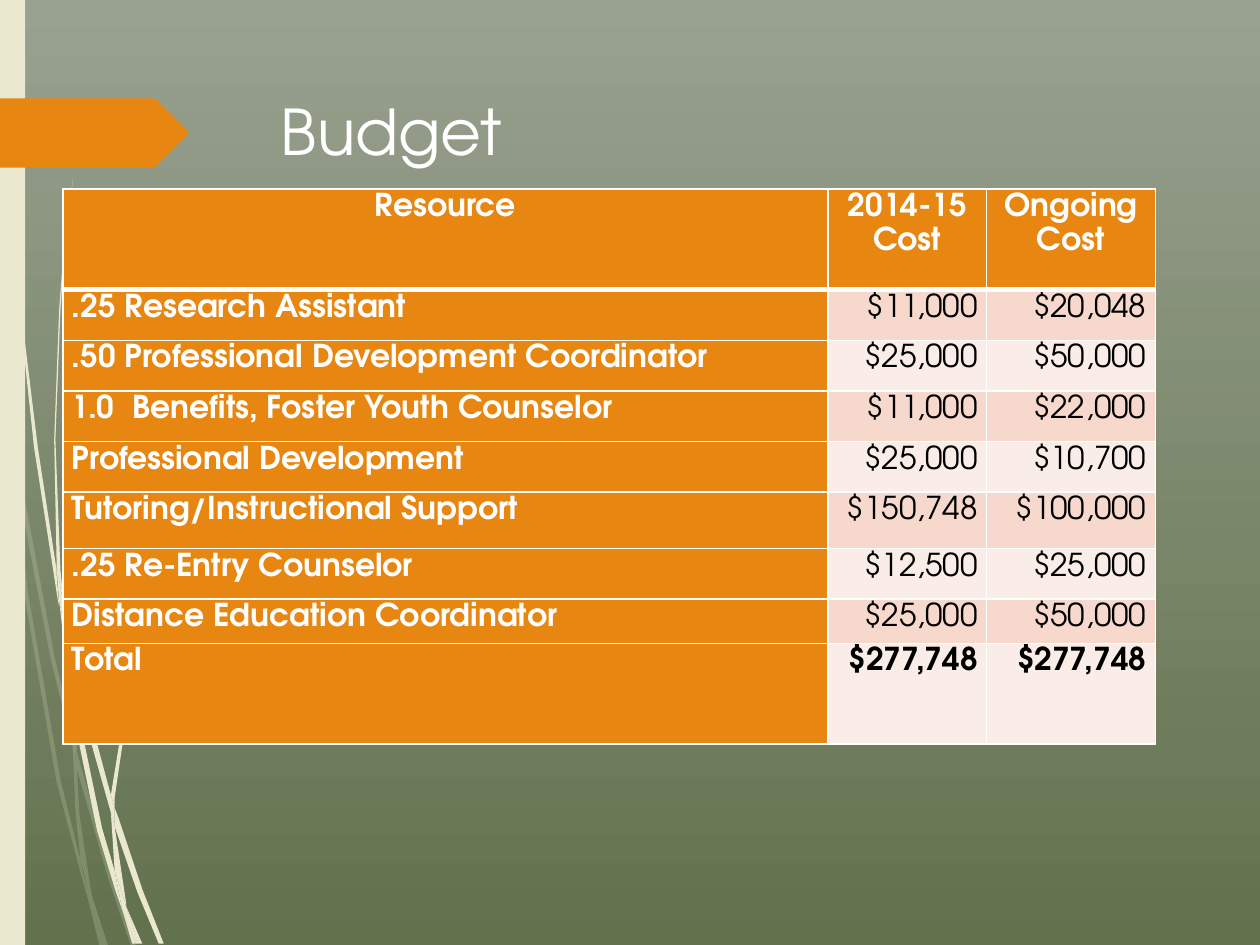
from lxml.etree import SubElement
from pptx import Presentation
from pptx.dml.color import RGBColor
from pptx.enum.shapes import MSO_SHAPE
from pptx.enum.text import MSO_ANCHOR, PP_ALIGN
from pptx.oxml.ns import qn
from pptx.util import Cm, Pt

FONT = "TeX Gyre Adventor"
COLORS = {
    "sky": "99A190", "ground": "62724D", "cream": "EAE8CF", "orange": "E78712",
    "white": "FFFFFF", "black": "000000", "band_dark": "F6D9CC", "band_light": "FAEDE7",
}

TITLE = "Budget"
BUDGET = [
    ("Resource", "2014-15 Cost", "Ongoing Cost"),
    (".25 Research Assistant", "$11,000", "$20,048"),
    (".50 Professional Development Coordinator", "$25,000", "$50,000"),
    ("1.0  Benefits, Foster Youth Counselor", "$11,000", "$22,000"),
    ("Professional Development", "$25,000", "$10,700"),
    ("Tutoring/Instructional Support", "$150,748", "$100,000"),
    (".25 Re-Entry Counselor", "$12,500", "$25,000"),
    ("Distance Education Coordinator", "$25,000", "$50,000"),
    ("Total", "$277,748", "$277,748"),
]
COL_WIDTHS = [15.42, 3.2, 3.4]
ROW_HEIGHTS = [2.03, 1.02, 1.02, 1.02, 1.02, 1.14, 1.02, 0.89, 2.03]

# Grass outlines, in hundredths of an inch
UNIT = Cm(2.54) / 100
FAINT_GRASS = [
    [(8, 350), (6, 322), (0, 282), (0, 299), (7, 344)],
    [(40, 522), (59, 599), (59, 586), (43, 520), (10, 345), (12, 376)],
    [(64, 607), (61, 596), (61, 610), (85, 694), (104, 751), (108, 751), (88, 692)],
    [(83, 751), (86, 751), (73, 711)],
    [(64, 683), (48, 619), (22, 469), (12, 376), (8, 350), (19, 470), (45, 621),
     (64, 693), (70, 714), (69, 707)],
    [(58, 599), (60, 646), (64, 683), (67, 692), (73, 711), (72, 706), (63, 646),
     (61, 610), (61, 608)],
    [(61, 584), (76, 462), (111, 349), (159, 245), (187, 198), (201, 175), (217, 154),
     (217, 153), (201, 175), (186, 197), (158, 244), (110, 348), (75, 461), (59, 584),
     (59, 586), (61, 596)],
    [(70, 714), (79, 751), (82, 751)],
    [(61, 608), (61, 610), (61, 596), (59, 586), (58, 599)],
    [(67, 692), (65, 683), (69, 707), (70, 714), (82, 751), (83, 751), (73, 711)],
]
BRIGHT_GRASS = [
    [(5, 110), (14, 233), (27, 355), (46, 477), (47, 481), (45, 457), (45, 453),
     (30, 355), (15, 232), (6, 109), (4, 48), (3, 0), (2, 0), (3, 48)],
    [(73, 592), (88, 645), (88, 633), (88, 631), (77, 590), (50, 472), (53, 505)],
    [(94, 649), (91, 641), (91, 656), (109, 708), (126, 749), (130, 749), (113, 706)],
    [(91, 691), (81, 657), (60, 556), (53, 505), (47, 477), (56, 557), (77, 659),
     (92, 708), (97, 722), (96, 717)],
    [(50, 472), (48, 453), (44, 349), (48, 245), (52, 193), (58, 141), (51, 193),
     (47, 245), (43, 349), (45, 449), (49, 472)],
    [(110, 749), (113, 749), (100, 719)],
    [(47, 477), (53, 505), (50, 472), (49, 472), (45, 449), (45, 453)],
    [(91, 633), (103, 552), (131, 476), (169, 406), (191, 374), (203, 359), (216, 344),
     (215, 344), (203, 358), (191, 373), (168, 405), (129, 474), (101, 551), (88, 631),
     (91, 641)],
    [(97, 722), (105, 749), (108, 749)],
    [(88, 645), (91, 691), (96, 706), (100, 719), (100, 716), (91, 656), (90, 651)],
    [(88, 645), (90, 651), (91, 656), (91, 641), (88, 631), (88, 633)],
    [(96, 706), (91, 691), (96, 717), (97, 722), (108, 749), (110, 749), (100, 719)],
]
ARROW = [(0, 78), (121, 78), (124, 79), (149, 104), (149, 107), (124, 132), (121, 133), (0, 133)]


def rgb(name):
    return RGBColor.from_string(COLORS[name])


def paint(sp, color):
    sp.shadow.inherit = False
    sp.fill.solid()
    sp.fill.fore_color.rgb = rgb(color)
    sp.line.fill.background()


def add_outline(s, points, color, alpha=None):
    builder = s.shapes.build_freeform(*points[0], scale=UNIT)
    builder.add_line_segments(points[1:], close=True)
    sp = builder.convert_to_shape()
    paint(sp, color)
    if alpha:
        clr = sp.fill._xPr.find(qn("a:solidFill"))[0]
        SubElement(clr, qn("a:alpha"), val=str(alpha * 1000))


def set_borders(cell, **widths):
    tcPr = cell._tc.get_or_add_tcPr()
    for side in "LRTB":
        ln = SubElement(tcPr, qn(f"a:ln{side}"), w=str(Pt(widths.get(side, 1))))
        SubElement(SubElement(ln, qn("a:solidFill")), qn("a:srgbClr"), val=COLORS["white"])


def fill_cell(cell, text, row, col):
    header, label, total = row == 0, col == 0, row == len(BUDGET) - 1
    set_borders(cell, T=3 if row == 1 else 1, B=3 if header else 1)
    cell.fill.solid()
    band = "band_dark" if row % 2 else "band_light"
    cell.fill.fore_color.rgb = rgb("orange" if header or label else band)
    cell.margin_left = cell.margin_right = Cm(0.18)
    cell.margin_top = cell.margin_bottom = 0
    cell.text = text
    p = cell.text_frame.paragraphs[0]
    p.line_spacing = 1.15
    p.alignment = PP_ALIGN.CENTER if header else PP_ALIGN.LEFT if label else PP_ALIGN.RIGHT
    p.font.name, p.font.size = FONT, Pt(18)
    p.font.bold = header or label or total
    p.font.color.rgb = rgb("white" if header or label else "black")


def main():
    prs = Presentation()
    prs.slide_width, prs.slide_height = Cm(25.4), Cm(19.05)
    s = prs.slides.add_slide(prs.slide_layouts[5])

    # Background
    bg = s.background.fill
    bg.gradient()
    bg.gradient_angle = 270
    for stop, color in zip(bg.gradient_stops, ("sky", "ground")):
        stop.color.rgb = rgb(color)

    # Grass, side bar and arrow
    for points in FAINT_GRASS:
        add_outline(s, points, "cream", alpha=20)
    for points in BRIGHT_GRASS:
        add_outline(s, points, "cream")
    bar = s.shapes.add_shape(MSO_SHAPE.RECTANGLE, 0, 0, Cm(0.51), prs.slide_height)
    paint(bar, "cream")
    add_outline(s, ARROW, "orange")

    # Title
    title = s.shapes.title
    title.left, title.top, title.width, title.height = Cm(5.41), Cm(1.73), Cm(18.31), Cm(3.56)
    tf = title.text_frame
    tf.text = TITLE
    tf.vertical_anchor = MSO_ANCHOR.TOP
    p = tf.paragraphs[0]
    p.alignment = PP_ALIGN.LEFT
    p.font.name, p.font.size = FONT, Pt(36)
    p.font.color.rgb = rgb("white")

    # Budget table
    table = s.shapes.add_table(len(BUDGET), len(COL_WIDTHS), Cm(1.27), Cm(3.81),
                               Cm(sum(COL_WIDTHS)), Cm(sum(ROW_HEIGHTS))).table
    for column, width in zip(table.columns, COL_WIDTHS):
        column.width = Cm(width)
    for i, (height, texts) in enumerate(zip(ROW_HEIGHTS, BUDGET)):
        table.rows[i].height = Cm(height)
        for j, text in enumerate(texts):
            fill_cell(table.cell(i, j), text, i, j)

    prs.save("out.pptx")


if __name__ == "__main__":
    main()
